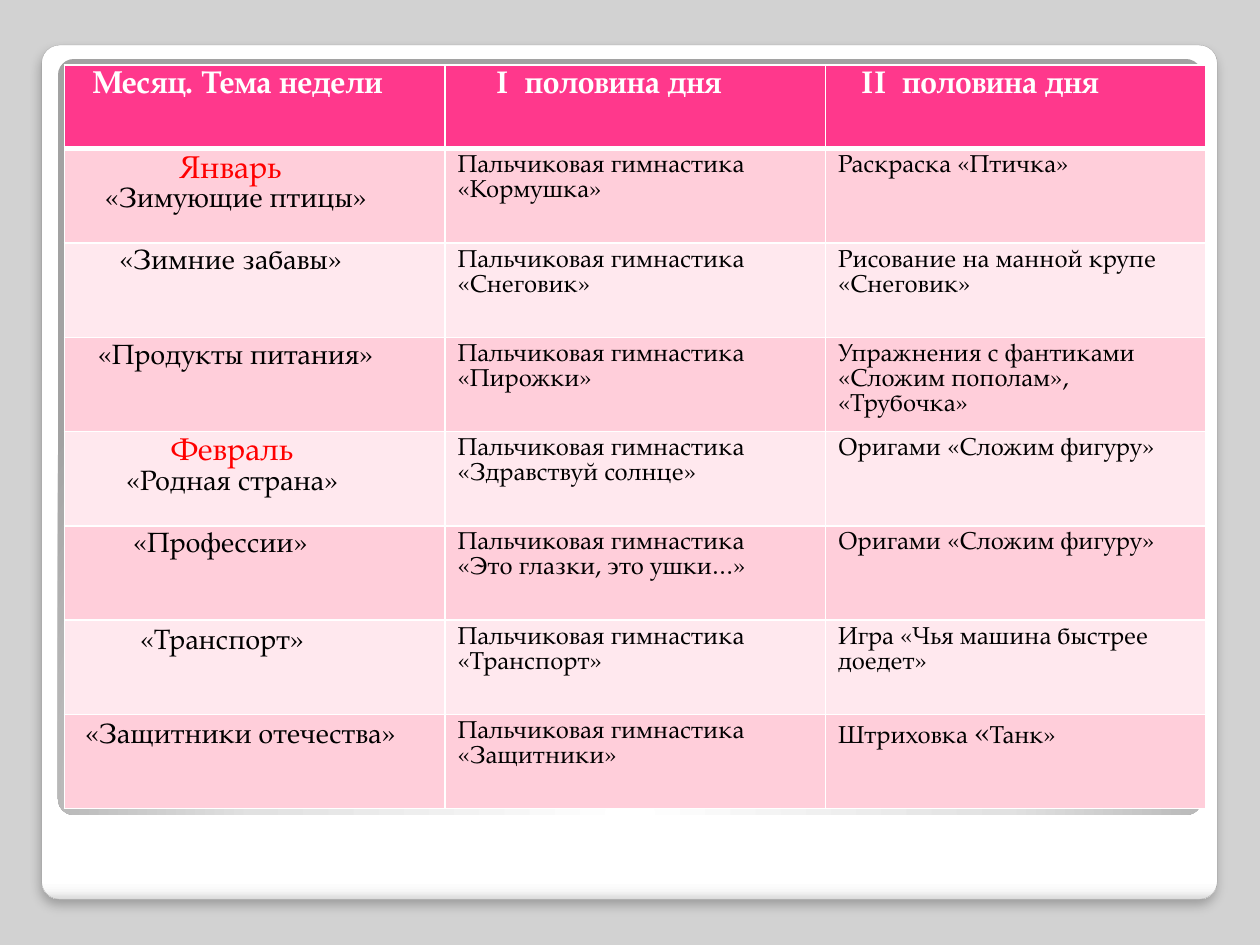
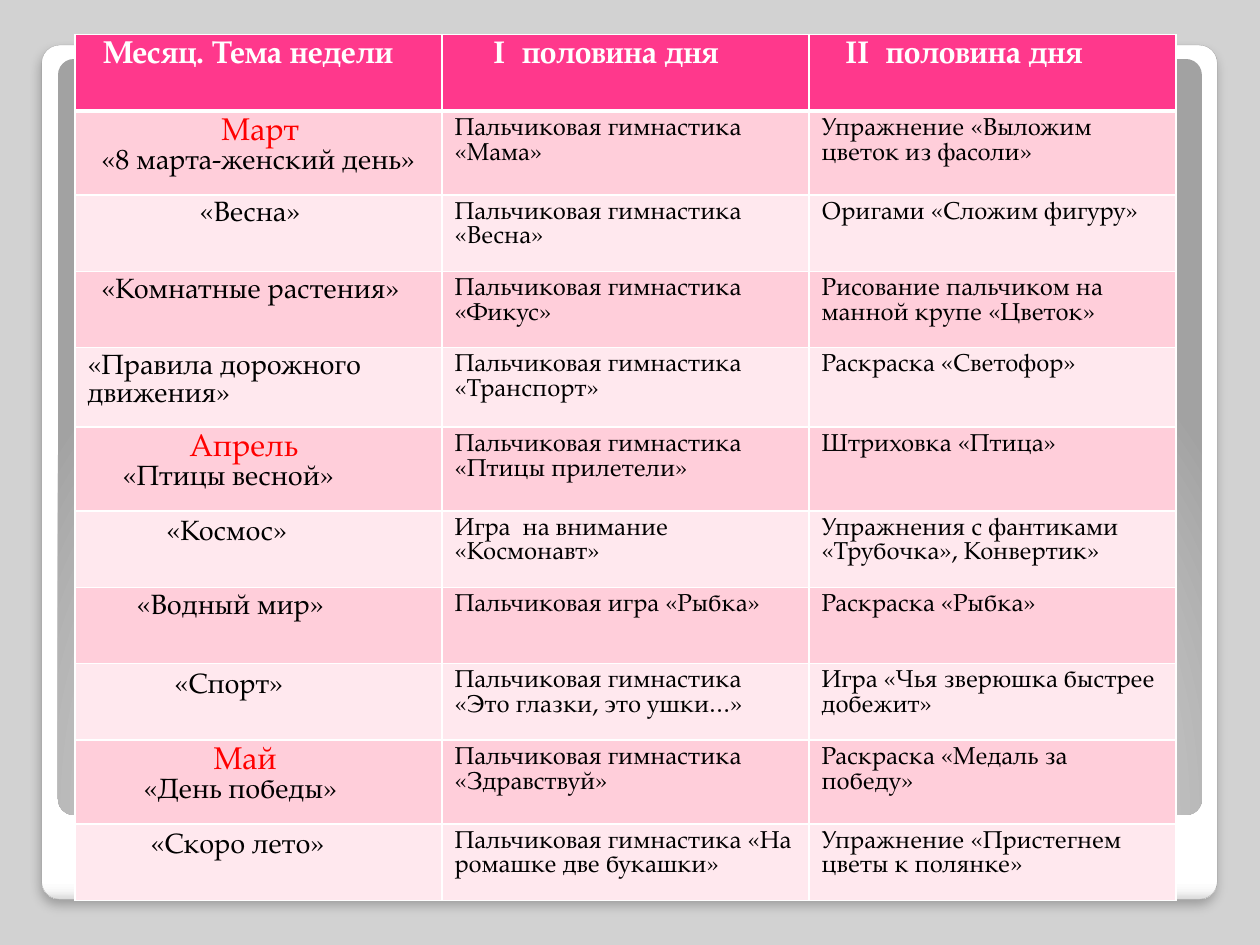
from dataclasses import dataclass
from itertools import accumulate

from lxml import etree
from pptx import Presentation
from pptx.dml.color import RGBColor
from pptx.enum.shapes import MSO_SHAPE
from pptx.oxml import parse_xml
from pptx.oxml.ns import nsdecls, qn
from pptx.util import Cm, Pt

ROUNDED = MSO_SHAPE.ROUNDED_RECTANGLE
FONT = "TeX Gyre Pagella"
WHITE = RGBColor(0xFF, 0xFF, 0xFF)
BLACK = RGBColor(0, 0, 0)
RED = RGBColor(0xFF, 0, 0)
PINK = RGBColor(0xFF, 0x38, 0x8C)
ROSE = RGBColor(0xFF, 0xCE, 0xDA)
BLUSH = RGBColor(0xFF, 0xE8, 0xEE)
BACKDROP = RGBColor(0xD2, 0xD2, 0xD2)
FRAME_EDGE = RGBColor(0xA4, 0xA4, 0xA4)
PEARL = RGBColor(0xF7, 0xF7, 0xF7)
SILVER = RGBColor(0xDA, 0xDA, 0xDA)
MIST = RGBColor(0xE1, 0xE1, 0xE1)
STEEL = RGBColor(0xA2, 0xA2, 0xA2)

HEADING_SIZE, THEME_SIZE, ACTIVITY_SIZE = 18, 16, 14
THIN, THICK = 1, 3
TOP_MARGIN, LOWERED_MARGIN = 0.13, 0.18
LINEAR_DOWN = '<a:lin ang="5400000" scaled="0"/>'
FROM_BELOW = ('<a:path path="circle"><a:fillToRect l="50000" t="175000" '
              'r="50000" b="-75000"/></a:path>')


@dataclass(frozen=True)
class Line:
    text: str
    size: int
    indent: float = 0
    color: RGBColor = BLACK
    bold: bool = False


@dataclass(frozen=True)
class Panel:
    left: float
    top: float
    width: float
    height: float
    stops: tuple[tuple[int, RGBColor], ...]
    direction: str
    raised: bool = False


@dataclass(frozen=True)
class Week:
    theme: str
    indent: float
    morning: str
    evening: str
    month: str = ""
    month_indent: float = 0
    lowered: bool = False
    evening_accent: str = ""


@dataclass(frozen=True)
class Schedule:
    left: float
    top: float
    column_width: float
    row_heights: tuple[float, ...]
    weeks: tuple[Week, ...]


PANELS = (
    Panel(0.84, 0.91, 23.7, 17.22,
          ((0, WHITE), (98, WHITE), (99, PEARL), (100, SILVER)), LINEAR_DOWN, True),
    Panel(1.17, 1.19, 23.06, 15.24,
          ((0, WHITE), (55, MIST), (100, STEEL)), FROM_BELOW),
)

HEADINGS = tuple(
    Line(text, HEADING_SIZE, indent, WHITE, True)
    for text, indent in (("Месяц. Тема недели", 0.32),
                         ("I  половина дня", 0.79),
                         ("II  половина дня", 0.48)))

WINTER = Schedule(1.3, 1.31, 7.67, (1.69,) + (1.9,) * 7, (
    Week("«Зимующие птицы»", 0.56, "Пальчиковая гимнастика «Кормушка»",
         "Раскраска «Птичка»", "Январь", 2.06),
    Week("«Зимние забавы»", 0.85, "Пальчиковая гимнастика «Снеговик»",
         "Рисование на манной крупе «Снеговик»"),
    Week("«Продукты питания»", 0.42, "Пальчиковая гимнастика «Пирожки»",
         "Упражнения с фантиками «Сложим пополам», «Трубочка»"),
    Week("«Родная страна»", 0.99, "Пальчиковая гимнастика «Здравствуй солнце»",
         "Оригами «Сложим фигуру»", "Февраль", 1.9),
    Week("«Профессии»", 1.13, "Пальчиковая гимнастика\n«Это глазки, это ушки…»",
         "Оригами «Сложим фигуру»"),
    Week("«Транспорт»", 1.27, "Пальчиковая гимнастика «Транспорт»",
         "Игра «Чья машина быстрее доедет»", lowered=True),
    Week("«Защитники отечества»", 0.16, "Пальчиковая гимнастика «Защитники»",
         "Штриховка «Танк»", lowered=True, evening_accent="«"),
))

SPRING = Schedule(1.51, 0.7, 7.4, (
    1.54, 1.69, 1.54, 1.54, 1.6, 1.69, 1.54, 1.54, 1.54, 1.69, 1.54), (
    Week("«8 марта-женский день»", 0.28, "Пальчиковая гимнастика «Мама»",
         "Упражнение «Выложим цветок из фасоли»", "Март", 2.7),
    Week("«Весна»", 2.26, "Пальчиковая гимнастика «Весна»",
         "Оригами «Сложим фигуру»"),
    Week("«Комнатные растения»", 0.28, "Пальчиковая гимнастика «Фикус»",
         "Рисование пальчиком на манной крупе «Цветок»"),
    Week("«Правила дорожного движения»", 0, "Пальчиковая гимнастика «Транспорт»",
         "Раскраска «Светофор»"),
    Week("«Птицы весной»", 0.71, "Пальчиковая гимнастика «Птицы прилетели»",
         "Штриховка «Птица»", "Апрель", 2.06),
    Week("«Космос»", 1.59, "Игра  на внимание «Космонавт»",
         "Упражнения с фантиками «Трубочка», Конвертик»", lowered=True),
    Week("«Водный мир»", 0.99, "Пальчиковая игра «Рыбка»", "Раскраска «Рыбка»"),
    Week("«Спорт»", 1.75, "Пальчиковая гимнастика «Это глазки, это ушки…»",
         "Игра «Чья зверюшка быстрее добежит»", lowered=True),
    Week("«День победы»", 1.13, "Пальчиковая гимнастика «Здравствуй»",
         "Раскраска «Медаль за победу»", "Май", 2.54),
    Week("«Скоро лето»", 1.27, "Пальчиковая гимнастика «На ромашке две букашки»",
         "Упражнение «Пристегнем цветы к полянке»", lowered=True),
))


def draw_panel(slide, panel: Panel) -> None:
    frame = slide.shapes.add_shape(
        ROUNDED, Cm(panel.left), Cm(panel.top), Cm(panel.width), Cm(panel.height))
    frame.adjustments[0] = 0.021
    frame.shadow.inherit = False
    properties = frame._element.spPr
    stops = "".join(f'<a:gs pos="{position * 1000}"><a:srgbClr val="{color}"/></a:gs>'
                    for position, color in panel.stops)
    gradient = parse_xml(f'<a:gradFill {nsdecls("a")} rotWithShape="1">'
                         f'<a:gsLst>{stops}</a:gsLst>{panel.direction}</a:gradFill>')
    properties.find(qn("a:prstGeom")).addnext(gradient)
    if not panel.raised:
        frame.line.fill.background()
        return
    frame.line.color.rgb = FRAME_EDGE
    frame.line.width = Pt(0.16)
    properties.find(qn("a:effectLst")).append(parse_xml(
        f'<a:outerShdw {nsdecls("a")} blurRad="{Pt(6)}" dist="{Pt(4)}" dir="5400000" '
        'algn="t" rotWithShape="0"><a:srgbClr val="000000">'
        '<a:alpha val="25000"/></a:srgbClr></a:outerShdw>'))


def style_run(run, line: Line) -> None:
    run.font.name = FONT
    run.font.size = Pt(line.size)
    run.font.bold = line.bold
    run.font.color.rgb = line.color


def write_lines(cell, lines: list[Line]) -> None:
    cell.text_frame.text = "\n".join(line.text for line in lines)
    for paragraph, line in zip(cell.text_frame.paragraphs, lines):
        indents = paragraph._p.get_or_add_pPr()
        indents.set("marL", "0")
        indents.set("indent", str(Cm(line.indent)))
        for run in paragraph.runs:
            style_run(run, line)


def enlarge_accent(cell, line: Line, accent: str) -> None:
    paragraph = cell.text_frame.paragraphs[0]
    before, mark, after = line.text.partition(accent)
    paragraph.text = before
    for part in (mark, after):
        paragraph.add_run().text = part
    for run in paragraph.runs:
        style_run(run, line)
    paragraph.runs[1].font.size = Pt(HEADING_SIZE)


def paint_cell(cell, color: RGBColor, top: int = THIN, bottom: int = THIN) -> None:
    cell.fill.solid()
    cell.fill.fore_color.rgb = color
    properties = cell._tc.get_or_add_tcPr()
    sides = (("lnL", THIN), ("lnR", THIN), ("lnT", top), ("lnB", bottom))
    for place, (side, weight) in enumerate(sides):
        border = etree.Element(qn(f"a:{side}"), w=str(Pt(weight)))
        paint = etree.SubElement(border, qn("a:solidFill"))
        etree.SubElement(paint, qn("a:srgbClr"), val=str(WHITE))
        properties.insert(place, border)


def theme_lines(week: Week) -> list[Line]:
    theme = Line(week.theme, THEME_SIZE, week.indent)
    if not week.month:
        return [theme]
    return [Line(week.month, HEADING_SIZE, week.month_indent, RED), theme]


def activity_lines(activity: str) -> list[Line]:
    return [Line(text, ACTIVITY_SIZE) for text in activity.split("\n")]


def draw_schedule(slide, schedule: Schedule) -> None:
    total_height = list(accumulate(schedule.row_heights))[-1]
    table = slide.shapes.add_table(
        len(schedule.row_heights), len(HEADINGS), Cm(schedule.left), Cm(schedule.top),
        Cm(schedule.column_width * len(HEADINGS)), Cm(total_height)).table
    table.first_row = False
    table.horz_banding = False
    for column in table.columns:
        column.width = Cm(schedule.column_width)
    for row, height in zip(table.rows, schedule.row_heights):
        row.height = Cm(height)
    for index, heading in enumerate(HEADINGS):
        write_lines(table.cell(0, index), [heading])
        paint_cell(table.cell(0, index), PINK, bottom=THICK)
    for number, week in enumerate(schedule.weeks, start=1):
        columns = (theme_lines(week), activity_lines(week.morning),
                   activity_lines(week.evening))
        for index, lines in enumerate(columns):
            cell = table.cell(number, index)
            write_lines(cell, lines)
            paint_cell(cell, ROSE if number % 2 else BLUSH,
                       top=THICK if number == 1 else THIN)
        table.cell(number, 0).margin_top = Cm(
            LOWERED_MARGIN if week.lowered else TOP_MARGIN)
        if week.evening_accent:
            enlarge_accent(table.cell(number, 2), columns[2][0], week.evening_accent)


def main() -> None:
    presentation = Presentation()
    presentation.slide_width = Cm(25.4)
    presentation.slide_height = Cm(19.05)
    for schedule in (WINTER, SPRING):
        slide = presentation.slides.add_slide(presentation.slide_layouts[6])
        slide.background.fill.solid()
        slide.background.fill.fore_color.rgb = BACKDROP
        for panel in PANELS:
            draw_panel(slide, panel)
        draw_schedule(slide, schedule)
    presentation.save("out.pptx")


if __name__ == "__main__":
    main()
